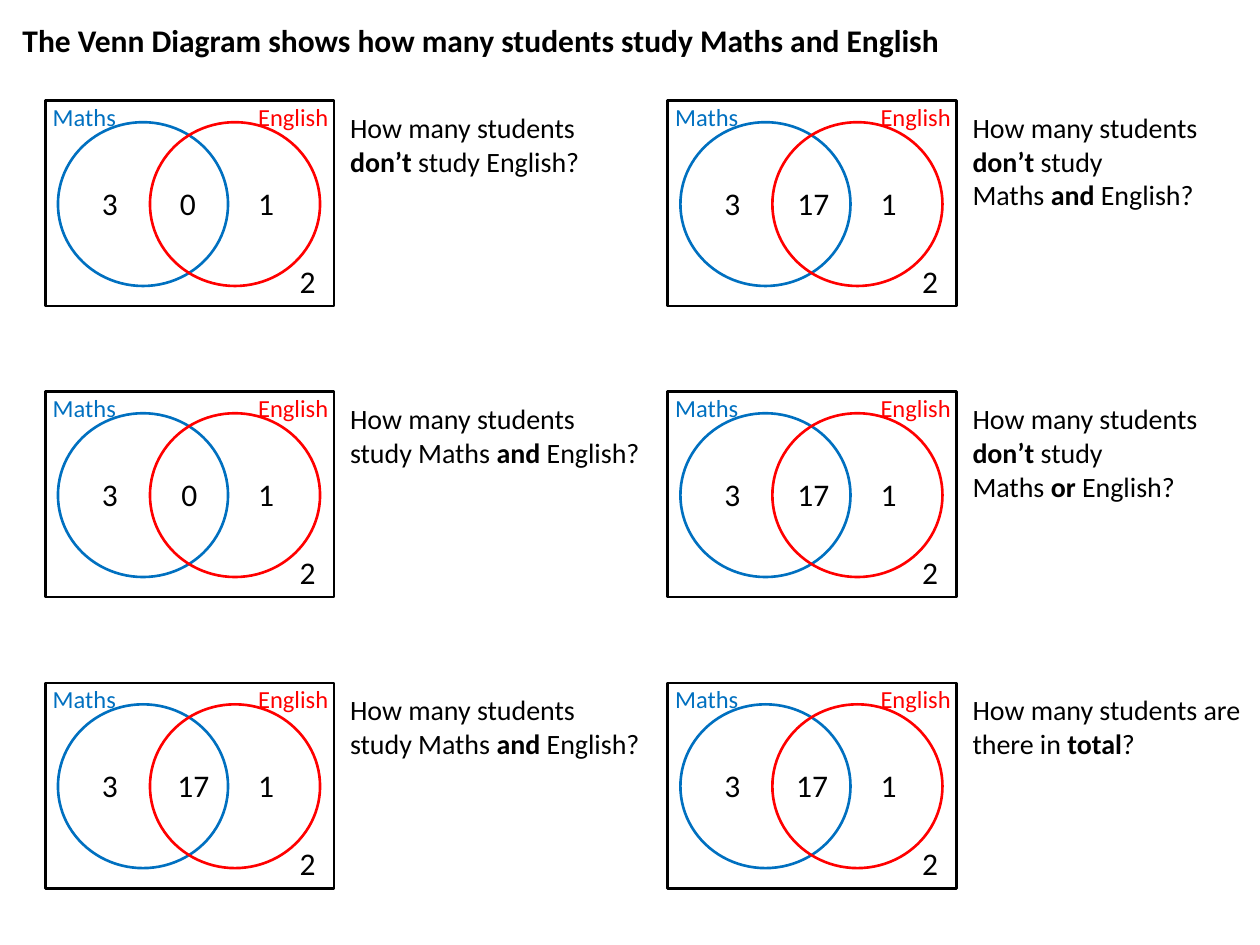
from pptx import Presentation
from pptx.dml.color import RGBColor
from pptx.enum.shapes import MSO_SHAPE
from pptx.enum.text import MSO_AUTO_SIZE
from pptx.util import Inches, Pt

RECTANGLE, OVAL = MSO_SHAPE.RECTANGLE, MSO_SHAPE.OVAL
GROW = MSO_AUTO_SIZE.SHAPE_TO_FIT_TEXT
FONT = "Calibri"
BLACK, BLUE, RED = "000000", "0070C0", "FF0000"

# Asterisks surround bold words.
TITLE = "*The Venn Diagram shows how many students study Maths and English*"

# Row by row: number in the overlap, its left and width inside the panel,
# question paragraphs, question width
PANELS = [
    ("0", 0.97, 0.36, ["How many students *don’t* study English?"], 2.42),
    ("17", 0.93, 0.48, ["How many students *don’t* study",
                        "Maths *and* English?"], 2.38),
    ("0", 0.98, 0.48, ["How many students study Maths *and* English?"], 2.51),
    ("17", 0.93, 0.48, ["How many students *don’t* study",
                        "Maths *or* English?"], 2.42),
    ("17", 0.95, 0.48, ["How many students study Maths *and* English?"], 2.52),
    ("17", 0.92, 0.48, ["How many students are there in *total*?"], 2.42),
]
COLUMNS = 2
FIRST_LEFT, FIRST_TOP = 0.36, 0.8
COLUMN_STEP, ROW_STEP = 4.94, 2.31

# Left and top below are measured from the panel's corner.
OUTLINES = [
    (RECTANGLE, 0, 0, 2.29, 1.63, BLACK),
    (OVAL, 0.1, 0.17, 1.35, 1.3, BLUE),
    (OVAL, 0.83, 0.17, 1.35, 1.3, RED),
]
LABELS = [
    ("3", 0.35, 0.61, 0.36, 0.4, 18, BLACK),
    ("1", 1.59, 0.61, 0.36, 0.4, 18, BLACK),
    ("2", 1.92, 1.23, 0.36, 0.4, 18, BLACK),
    ("English", 1.59, -0.04, 0.8, 0.34, 14, RED),
    ("Maths", -0.04, -0.04, 1.12, 0.34, 14, BLUE),
]


def colour(value):
    return RGBColor.from_string(value)


def add_outline(shapes, kind, left, top, width, height, line_colour):
    shape = shapes.add_shape(kind, Inches(left), Inches(top),
                             Inches(width), Inches(height))
    shape.shadow.inherit = False
    shape.fill.background()
    shape.line.color.rgb = colour(line_colour)
    shape.line.width = Pt(1.5)


def add_text(shapes, paragraphs, left, top, width, height, size, text_colour=BLACK):
    box = shapes.add_textbox(Inches(left), Inches(top), Inches(width), Inches(height))
    frame = box.text_frame
    frame.word_wrap = True
    frame.auto_size = GROW
    for index, text in enumerate(paragraphs):
        para = frame.add_paragraph() if index else frame.paragraphs[0]
        for part, words in enumerate(text.split("*")):
            if not words:
                continue
            span = para.add_run()
            span.text = words
            formats = {"name": FONT, "size": Pt(size), "bold": part % 2 == 1}
            for name, value in formats.items():
                setattr(span.font, name, value)
            span.font.color.rgb = colour(text_colour)


def add_panel(page, x, y, overlap, overlap_left, overlap_width, question, question_width):
    """Draw one Venn diagram and its question as a group with its corner at x, y."""
    shapes = page.shapes.add_group_shape().shapes
    for kind, left, top, *rest in OUTLINES:
        add_outline(shapes, kind, x + left, y + top, *rest)
    add_text(shapes, [overlap], x + overlap_left, y + 0.61, overlap_width, 0.4, 18)
    for text, left, top, *rest in LABELS:
        add_text(shapes, [text], x + left, y + top, *rest)
    height = 0.91 if len(question) > 1 else 0.64
    add_text(shapes, question, x + 2.32, y + 0.03, question_width, height, 16)


def main():
    deck = Presentation()
    deck.slide_width, deck.slide_height = Inches(10), Inches(7.5)
    page = deck.slides.add_slide(deck.slide_layouts[6])
    add_text(page.shapes, [TITLE], 0.08, 0.12, 8.18, 0.4, 18)
    for index, panel in enumerate(PANELS):
        row, column = divmod(index, COLUMNS)
        add_panel(page, FIRST_LEFT + column * COLUMN_STEP,
                  FIRST_TOP + row * ROW_STEP, *panel)
    deck.save("out.pptx")


if __name__ == "__main__":
    main()
